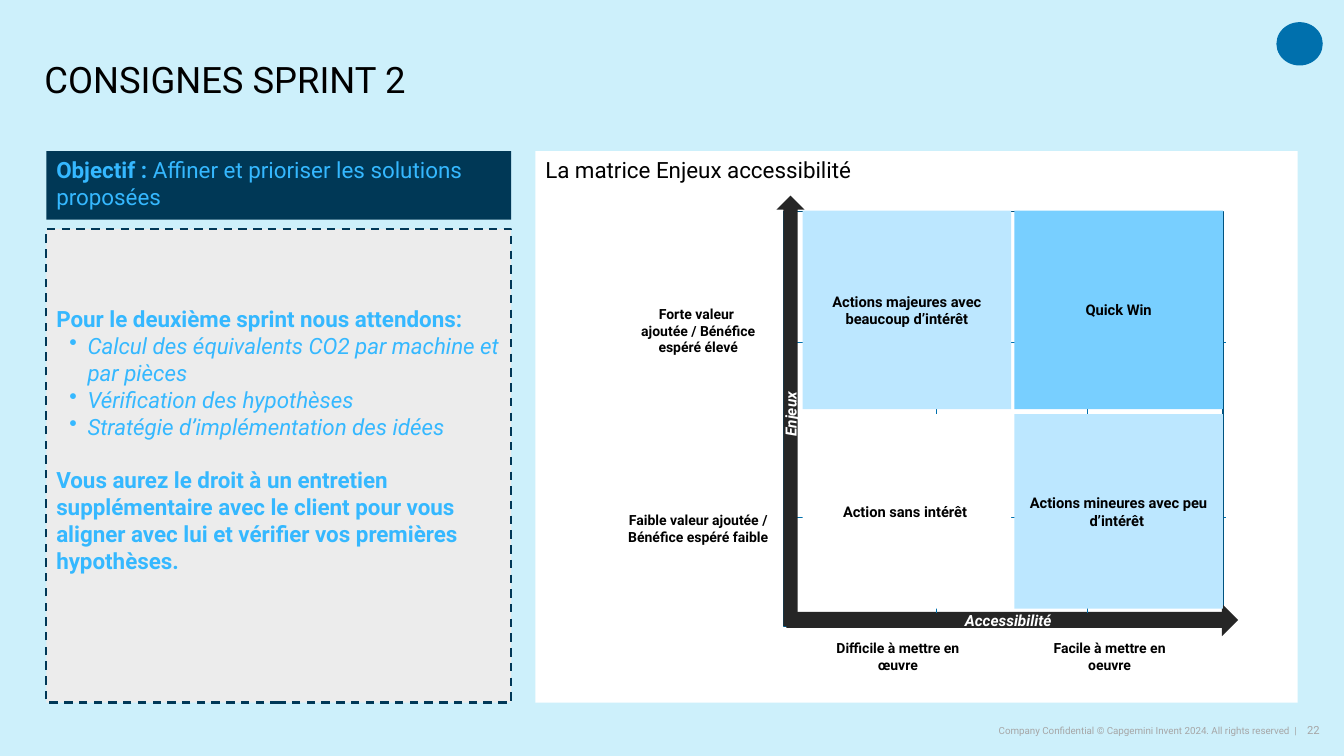
import pptx
import pptx.util
import pptx.dml.color
import pptx.enum.dml
import pptx.enum.shapes
import pptx.enum.text
import pptx.oxml
import pptx.oxml.ns
from dataclasses import dataclass
from lxml import etree

PX = 9144
SHAPES = pptx.enum.shapes.MSO_SHAPE
ANCHOR = pptx.enum.text.MSO_ANCHOR
ALIGN = pptx.enum.text.PP_ALIGN


@dataclass(frozen=True)
class Theme:
    """Colours, font and type sizes of the slide."""
    font: str = "Roboto"
    sky: str = "CDF0FB"
    navy: str = "003856"
    dash: str = "003857"
    accent: str = "35B8FF"
    panel: str = "ECECEC"
    white: str = "FFFFFF"
    black: str = "000000"
    muted: str = "A6A6A6"
    axis: str = "262626"
    frame: str = "005380"
    grid: str = "0070AD"
    win: str = "78CFFF"
    action: str = "BCE7FF"
    title: float = 26
    body: float = 16
    axis_name: float = 11
    quadrant: float = 10.5
    label: float = 10
    page: float = 8
    legal: float = 7


THEME = Theme()


def px(length):
    """Turn px into EMU."""
    return pptx.util.Emu(round(length * PX))


def rgb(value):
    """Turn a hex string into a colour."""
    return pptx.dml.color.RGBColor.from_string(value)


def apply(target, values):
    """Set each attribute of the target from a dict of format values."""
    for name, value in values.items():
        setattr(target, name, value)


def style(size, color, **flags):
    """Return the format values of a run."""
    return {"size": pptx.util.Pt(size), "color": color, "name": THEME.font, **flags}


def add_runs(paragraph, *runs):
    """Add (text, style) runs; a newline in a text is a line break."""
    for text, look in runs:
        for number, line in enumerate(text.split("\n")):
            if number:
                paragraph.add_line_break()
            run = paragraph.add_run()
            run.text = line
            values = dict(look)
            run.font.color.rgb = rgb(values.pop("color"))
            apply(run.font, values)


def set_frame(shape, anchor=ANCHOR.MIDDLE, insets=(10, 5, 10, 5)):
    """Format the text frame of a shape and return it."""
    sides = ("margin_left", "margin_top", "margin_right", "margin_bottom")
    apply(shape.text_frame, {"word_wrap": True, "vertical_anchor": anchor,
                             "auto_size": pptx.enum.text.MSO_AUTO_SIZE.NONE,
                             **dict(zip(sides, map(px, insets)))})
    return shape.text_frame


def add_block(slide, box, fill=None, line=None, width=1, kind=SHAPES.RECTANGLE):
    """Add a preset shape with plain fill and line."""
    block = slide.shapes.add_shape(kind, *map(px, box))
    block.shadow.inherit = False
    if fill:
        block.fill.solid()
        block.fill.fore_color.rgb = rgb(fill)
    else:
        block.fill.background()
    if line:
        block.line.color.rgb = rgb(line)
        block.line.width = pptx.util.Pt(width)
    else:
        block.line.fill.background()
    return block


def add_label(slide, box, text, look, align=ALIGN.CENTER, **frame):
    """Add a text box with one paragraph."""
    label = slide.shapes.add_textbox(*map(px, box))
    paragraph = set_frame(label, **frame).paragraphs[0]
    paragraph.alignment = align
    add_runs(paragraph, (text, look))


def add_rule(slide, start, end):
    """Add a thin grid line."""
    rule = slide.shapes.add_connector(pptx.enum.shapes.MSO_CONNECTOR.STRAIGHT,
                                      *map(px, start + end))
    rule.line.color.rgb = rgb(THEME.grid)
    rule.line.width = pptx.util.Pt(0.5)
    etree.SubElement(rule.element.spPr, pptx.oxml.ns.qn("a:effectLst"))


def add_title(slide, box):
    """Place and format the title."""
    title = slide.shapes.title
    apply(title, dict(zip(("left", "top", "width", "height"), map(px, box))))
    paragraph = set_frame(title, insets=(0, 0, 0, 0)).paragraphs[0]
    apply(paragraph, {"alignment": ALIGN.LEFT, "line_spacing": 0.9})
    add_runs(paragraph, ("CONSIGNES SPRINT 2", style(THEME.title, THEME.black)))


def add_brief(slide, box):
    """Draw the objective banner and the dashed panel of expectations."""
    left, top, width, height = box
    plain = style(THEME.body, THEME.accent, bold=False)
    strong = style(THEME.body, THEME.accent, bold=True)
    slanted = {**plain, "italic": True}

    objective = add_block(slide, (left, top, width, 68), THEME.navy)
    paragraph = set_frame(objective, ANCHOR.TOP).paragraphs[0]
    paragraph.alignment = ALIGN.LEFT
    add_runs(paragraph, ("Objectif : ", strong),
             ("Affiner et prioriser les solutions proposées", plain))

    panel = add_block(slide, (left, top + 77, width, height - 77),
                      THEME.panel, THEME.dash, 1.5)
    panel.line.dash_style = pptx.enum.dml.MSO_LINE.DASH
    expectations = set_frame(panel, insets=(10, 5, 10, 57))
    paragraph = expectations.paragraphs[0]
    paragraph.alignment = ALIGN.LEFT
    add_runs(paragraph, ("Pour le deuxième sprint nous attendons:", strong))
    for task in ("Calcul des équivalents CO2 par machine et par pièces",
                 "Vérification des hypothèses",
                 "Stratégie d’implémentation des idées"):
        paragraph = expectations.add_paragraph()
        paragraph.alignment = ALIGN.LEFT
        properties = paragraph._p.get_or_add_pPr()
        properties.set("marL", str(px(31)))
        properties.set("indent", str(px(-18)))
        etree.SubElement(properties, pptx.oxml.ns.qn("a:buChar")).set("char", "•")
        add_runs(paragraph, (task, slanted))
    paragraph = expectations.add_paragraph()
    apply(paragraph, {"alignment": ALIGN.LEFT, "space_before": pptx.util.Pt(19)})
    add_runs(paragraph, (
        "Vous aurez le droit à un entretien supplémentaire avec le client pour vous "
        "aligner avec lui et vérifier vos premières hypothèses.", strong))


def add_matrix(slide, box):
    """Draw the matrix panel with its axes, quadrants and labels."""
    left, top, width, height = box
    heading = set_frame(add_block(slide, box, THEME.white), ANCHOR.TOP).paragraphs[0]
    heading.alignment = ALIGN.LEFT
    add_runs(heading, ("La matrice Enjeux accessibilité", style(THEME.body, THEME.black)))

    for y in (top + 190, top + 363):
        add_rule(slide, (left + 249, y), (left + 685, y))
    add_block(slide, (left + 246, top + 60, 436, 411), line=THEME.frame)
    axis_style = style(THEME.axis_name, THEME.white, bold=True, italic=True)
    for name, x, y, thickness, length, turn in (("Enjeux", 239, 44, 28, 427, 180),
                                                ("Accessibilité", 457, 241, 32, 448, 270)):
        axis = add_block(slide, (left + x, top + y, thickness, length),
                         THEME.axis, kind=SHAPES.DOWN_ARROW)
        axis.rotation = turn
        frame = set_frame(axis)
        frame._txBody.bodyPr.set("vert", "vert")
        frame.paragraphs[0].alignment = ALIGN.CENTER
        add_runs(frame.paragraphs[0], (name, axis_style))
    for x in (left + 398, left + 547):
        add_rule(slide, (x, top + 60), (x, top + 458))

    quadrant_style = style(THEME.quadrant, THEME.black, bold=True)
    rows = (
        (59, 197, (("Actions majeures avec beaucoup d’intérêt", THEME.action),
                   ("Quick Win", THEME.win))),
        (261, 193, (("Action sans intérêt ", THEME.white),
                    ("Actions mineures avec peu d’intérêt ", THEME.action))))
    for y, tall, cells in rows:
        for column, (name, fill) in enumerate(cells):
            quadrant = add_block(slide, (left + 265 + 210 * column, top + y, 207, tall), fill)
            paragraph = set_frame(quadrant).paragraphs[0]
            paragraph.alignment = ALIGN.CENTER
            add_runs(paragraph, (name, quadrant_style))

    for text, x, y, tall in (
            ("Forte valeur \najoutée / Bénéfice espéré élevé", 75, 148, 61),
            ("Faible valeur ajoutée / Bénéfice espéré faible", 75, 353, 44),
            ("Difficile à mettre en œuvre", 273, 480, 44),
            ("Facile à mettre en oeuvre", 483, 480, 44)):
        add_label(slide, (left + x, top + y, 173, tall), text,
                  style(THEME.label, THEME.black, bold=True), anchor=ANCHOR.TOP)


def add_footer(slide, box):
    """Write the legal line and the page number."""
    left, top, width, height = box
    add_label(slide, (left, top, width - 23, height),
              "Company Confidential © Capgemini Invent 2024. All rights reserved  |",
              style(THEME.legal, THEME.muted), ALIGN.RIGHT, insets=(0, 0, 0, 0))
    add_label(slide, (left + width - 25, top, 25, height), "22",
              style(THEME.page, THEME.muted), ALIGN.RIGHT,
              anchor=ANCHOR.TOP, insets=(0, 5, 0, 5))


def main():
    """Build the slide and save it."""
    deck = pptx.Presentation()
    apply(deck, {"slide_width": px(1333), "slide_height": px(750)})
    slide = deck.slides.add_slide(deck.slide_layouts[5])
    slide.background.fill.solid()
    slide.background.fill.fore_color.rgb = rgb(THEME.sky)
    add_block(slide, (1266, 22, 46, 43), THEME.grid, kind=SHAPES.OVAL)
    add_footer(slide, (790, 713, 519, 24))
    add_title(slide, (44, 42, 1197, 78))
    add_brief(slide, (46, 150, 461, 547))
    add_matrix(slide, (531, 150, 756, 547))
    deck.save("out.pptx")


if __name__ == "__main__":
    main()
